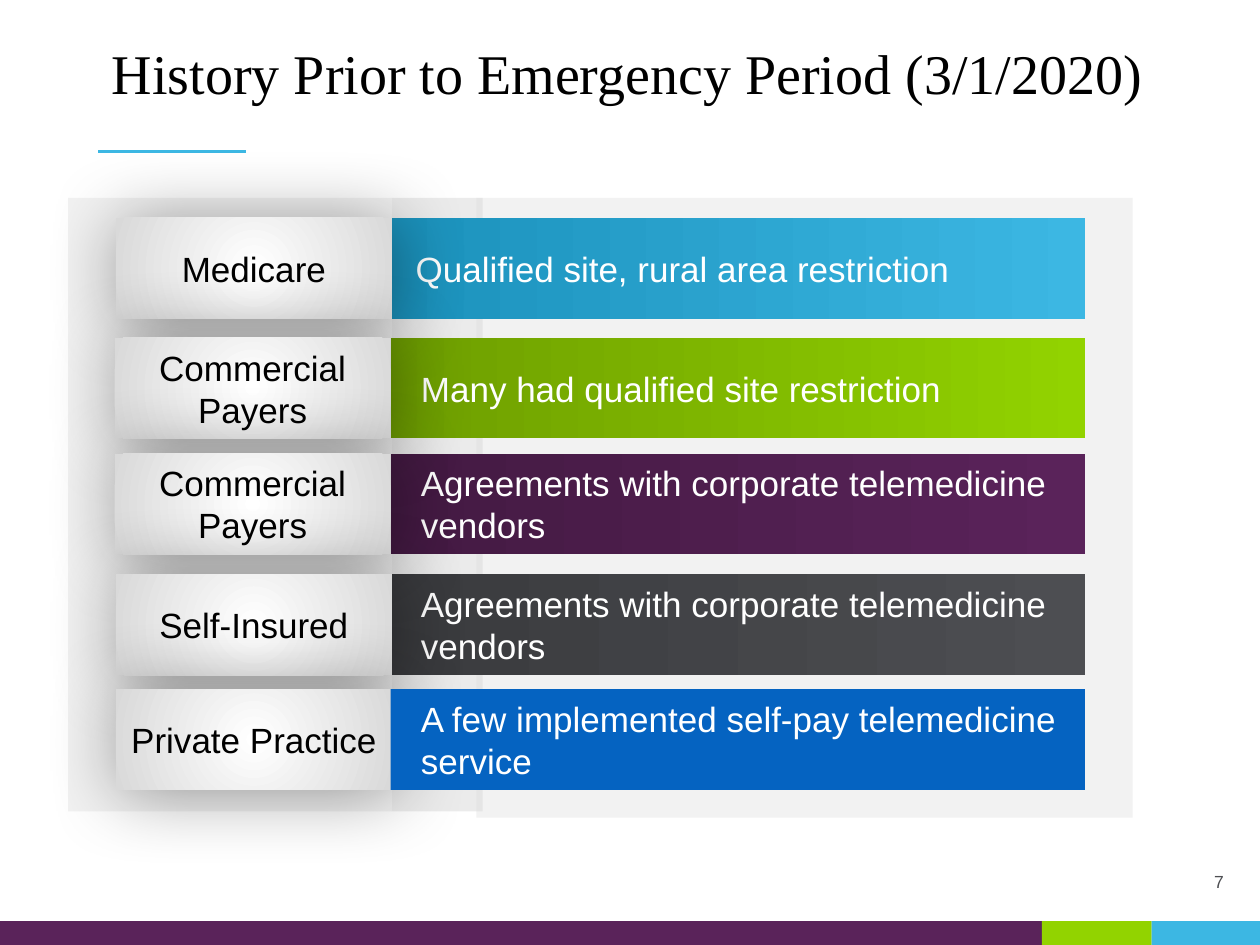
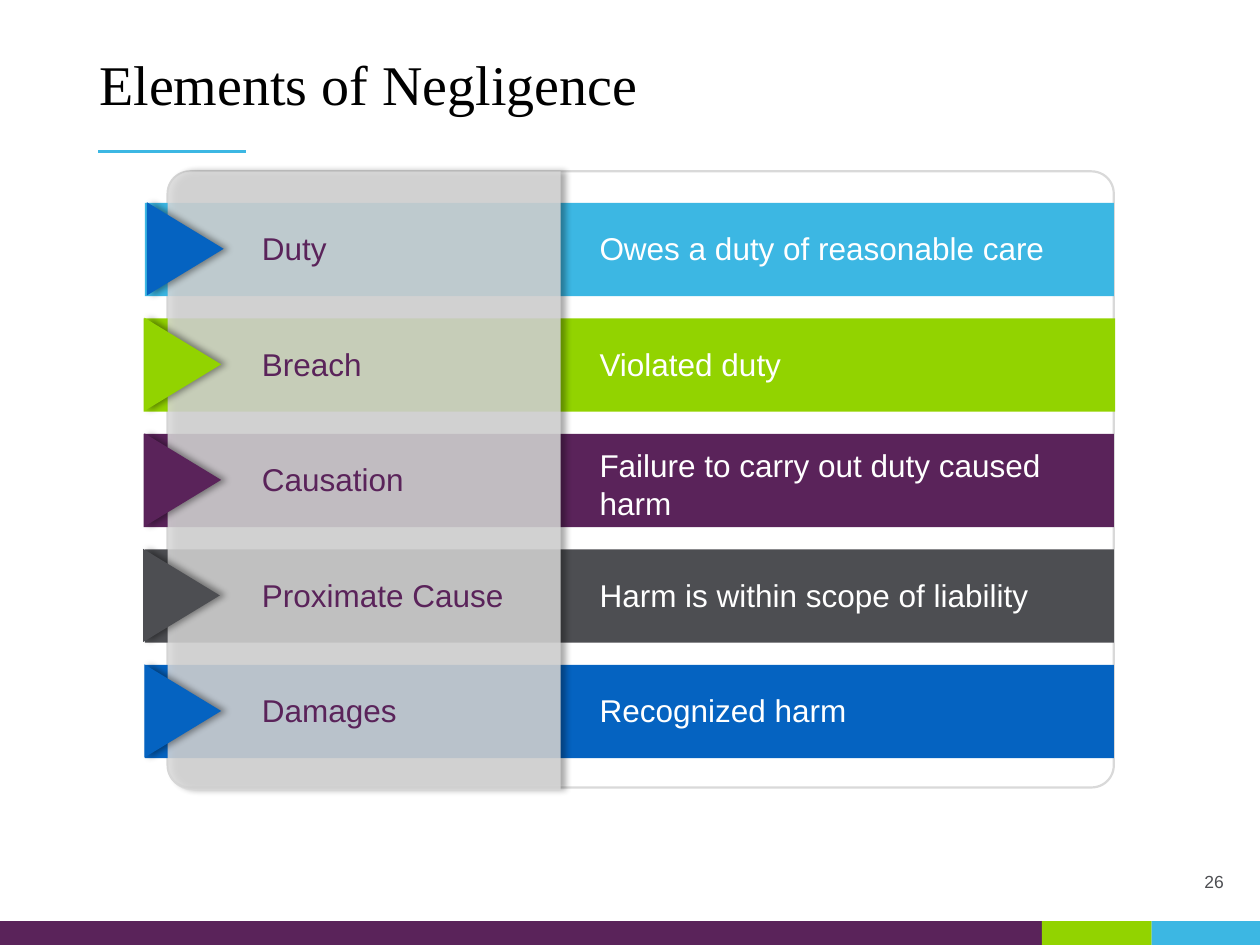
from dataclasses import dataclass
from math import cos, pi, sin

from lxml import etree
from pptx import Presentation
from pptx.dml.color import RGBColor
from pptx.enum.shapes import MSO_CONNECTOR, MSO_SHAPE
from pptx.enum.text import MSO_ANCHOR, PP_ALIGN
from pptx.oxml.ns import qn
from pptx.shapes.base import BaseShape
from pptx.slide import Slide
from pptx.util import Inches, Pt

RECTANGLE = MSO_SHAPE.RECTANGLE
ROUNDED = MSO_SHAPE.ROUNDED_RECTANGLE
TRIANGLE = MSO_SHAPE.ISOSCELES_TRIANGLE
STRAIGHT = MSO_CONNECTOR.STRAIGHT
TOP, MIDDLE, BOTTOM = MSO_ANCHOR.TOP, MSO_ANCHOR.MIDDLE, MSO_ANCHOR.BOTTOM
LEFT, CENTER, RIGHT = PP_ALIGN.LEFT, PP_ALIGN.CENTER, PP_ALIGN.RIGHT


@dataclass(frozen=True)
class Theme:
    sky: str = "3CB7E3"
    dark_sky: str = "1B92BC"
    green: str = "92D300"
    dark_green: str = "6E9E00"
    purple: str = "5A235A"
    dark_purple: str = "441A43"
    gray: str = "4D4E52"
    dark_gray: str = "3A3B3E"
    blue: str = "0563C1"
    silver: str = "D9D9D9"
    mist: str = "F2F2F2"
    white: str = "FFFFFF"
    black: str = "000000"
    title_font: str = "Times New Roman"
    body_font: str = "Arial"
    title_size: float = 32
    bar_size: float = 20
    element_size: float = 18
    number_size: float = 10


THEME = Theme()


@dataclass(frozen=True)
class Box:
    left: float
    top: float
    width: float
    height: float

    def lengths(self) -> list[int]:
        return [Inches(v) for v in (self.left, self.top, self.width, self.height)]


@dataclass(frozen=True)
class TextStyle:
    size: float
    color: str
    font: str = THEME.body_font
    align: PP_ALIGN = LEFT
    anchor: MSO_ANCHOR = TOP
    line_spacing: float = 1.0
    indent: float = 0
    side_inset: float = 0.1
    edge_inset: float = 0.05


@dataclass(frozen=True)
class PayerRow:
    top: float
    label_left: float
    label: tuple[str, ...]
    detail: str
    colors: tuple[str, ...]
    indent: float = 0.2
    side_inset: float = 0.04
    edge_inset: float = 0.02


@dataclass(frozen=True)
class ElementRow:
    name: str
    meaning: str
    color: str
    arrow_color: str
    arrow_left: float
    bar_left: float = 1.15
    bar_right: float = 8.84
    meaning_offset: float = 0.16
    meaning_height: float = 0.4


TITLE = TextStyle(THEME.title_size, THEME.black, THEME.title_font, line_spacing=0.9)
NUMBER = TextStyle(THEME.number_size, THEME.gray, align=RIGHT, anchor=BOTTOM,
                   line_spacing=0.9)
PAYER_LABEL = TextStyle(THEME.bar_size, THEME.black, align=CENTER, anchor=MIDDLE)
ELEMENT_NAME = TextStyle(THEME.element_size, THEME.purple)
ELEMENT_MEANING = TextStyle(THEME.element_size, THEME.white)

FOOTER_BANDS = ((0, 8.27, THEME.purple), (8.27, 0.87, THEME.green),
                (9.14, 0.86, THEME.sky))

PAYER_ROWS = (
    PayerRow(1.73, 0.92, ("Medicare",), "Qualified site, rural area restriction",
             (THEME.dark_sky, THEME.sky), 0.1, 0.1, 0.05),
    PayerRow(2.68, 0.91, ("Commercial", "Payers"),
             "Many had qualified site restriction", (THEME.dark_green, THEME.green)),
    PayerRow(3.6, 0.91, ("Commercial", "Payers"),
             "Agreements with corporate telemedicine vendors",
             (THEME.dark_purple, THEME.purple)),
    PayerRow(4.56, 0.92, ("Self-Insured",),
             "Agreements with corporate telemedicine vendors",
             (THEME.dark_gray, THEME.gray)),
    PayerRow(5.47, 0.92, ("Private Practice",),
             "A few implemented self-pay telemedicine service", (THEME.blue,)),
)

ELEMENT_ROWS = (
    ElementRow("Duty", "Owes a duty of reasonable care", THEME.sky, THEME.blue, 1.1),
    ElementRow("Breach", "Violated duty", THEME.green, THEME.green, 1.08,
               bar_left=1.14, bar_right=8.85),
    ElementRow("Causation", "Failure to carry out duty caused harm", THEME.purple,
               THEME.purple, 1.08, bar_left=1.14, meaning_offset=0.05,
               meaning_height=0.71),
    ElementRow("Proximate Cause", "Harm is within scope of liability", THEME.gray,
               THEME.gray, 1.07),
    ElementRow("Damages", "Recognized harm", THEME.blue, THEME.blue, 1.08),
)
ELEMENT_TOP = 1.61
ELEMENT_PITCH = 0.917


def rgb(color: str) -> RGBColor:
    return RGBColor.from_string(color)


def fill_solid(shape: BaseShape, color: str, opacity: int = 100) -> None:
    shape.fill.solid()
    shape.fill.fore_color.rgb = rgb(color)
    if opacity < 100:
        color_node = shape.element.spPr.find(qn("a:solidFill"))[0]
        etree.SubElement(color_node, qn("a:alpha"), val=str(opacity * 1000))


def fill_gradient(shape: BaseShape, colors: tuple[str, ...], radial: bool = False) -> None:
    shape.fill.gradient()
    shape.fill.gradient_angle = 0
    for stop, color in zip(shape.fill.gradient_stops, colors):
        stop.color.rgb = rgb(color)
    if radial:
        gradient = shape.element.spPr.find(qn("a:gradFill"))
        gradient.remove(gradient.find(qn("a:lin")))
        circle = etree.SubElement(gradient, qn("a:path"), path="circle")
        etree.SubElement(circle, qn("a:fillToRect"),
                         {side: "50000" for side in "ltrb"})


def add_shadow(shape: BaseShape, blur: float, angle: int) -> None:
    effects = shape.element.spPr.find(qn("a:effectLst"))
    shadow = etree.SubElement(
        effects, qn("a:outerShdw"), blurRad=str(Pt(blur)), dist=str(Pt(3)),
        dir=str(angle * 60000), algn="ctr", rotWithShape="0")
    color_node = etree.SubElement(shadow, qn("a:srgbClr"), val=THEME.black)
    etree.SubElement(color_node, qn("a:alpha"), val="40000")


def add_block(slide: Slide, box: Box, color: str, kind: MSO_SHAPE = RECTANGLE,
              opacity: int = 100) -> BaseShape:
    """Add a flat shape with no outline and no shadow."""
    shape = slide.shapes.add_shape(kind, *box.lengths())
    shape.shadow.inherit = False
    shape.line.fill.background()
    fill_solid(shape, color, opacity)
    return shape


def write_text(shape: BaseShape, lines: tuple[str, ...], style: TextStyle) -> None:
    frame = shape.text_frame
    frame.word_wrap = True
    frame.vertical_anchor = style.anchor
    frame.margin_left = frame.margin_right = Inches(style.side_inset)
    frame.margin_top = frame.margin_bottom = Inches(style.edge_inset)
    for index, line in enumerate(lines):
        paragraph = frame.add_paragraph() if index else frame.paragraphs[0]
        paragraph.alignment = style.align
        paragraph.line_spacing = style.line_spacing
        if style.indent:
            properties = paragraph._p.get_or_add_pPr()
            properties.set("marL", str(Inches(style.indent)))
            properties.set("indent", "0")
        run = paragraph.add_run()
        run.text = line
        run.font.name = style.font
        run.font.size = Pt(style.size)
        run.font.color.rgb = rgb(style.color)


def add_text(slide: Slide, box: Box, text: str, style: TextStyle) -> None:
    write_text(slide.shapes.add_textbox(*box.lengths()), (text,), style)


def add_base_slide(presentation: Presentation, number: int) -> Slide:
    """Add a blank slide with the accent rule, page number and footer bands."""
    slide = presentation.slides.add_slide(presentation.slide_layouts[6])
    rule = slide.shapes.add_connector(STRAIGHT, Inches(0.78), Inches(1.2),
                                      Inches(1.95), Inches(1.2))
    rule.line.color.rgb = rgb(THEME.sky)
    rule.line.width = Pt(1.5)
    etree.SubElement(rule.element.spPr, qn("a:effectLst"))
    add_text(slide, Box(1.19, 6.86, 8.62, 0.27), str(number), NUMBER)
    for left, width, color in FOOTER_BANDS:
        add_block(slide, Box(left, 7.31, width, 0.19), color)
    return slide


def add_payer_bar(slide: Slide, row: PayerRow) -> None:
    bar = add_block(slide, Box(3.1, row.top, 5.51, 0.8), row.colors[0])
    if len(row.colors) > 1:
        fill_gradient(bar, row.colors)
    write_text(bar, (row.detail,), TextStyle(
        THEME.bar_size, THEME.white, anchor=MIDDLE, indent=row.indent,
        side_inset=row.side_inset, edge_inset=row.edge_inset))


def add_payer_label(slide: Slide, row: PayerRow) -> None:
    label = add_block(slide, Box(row.label_left, row.top, 2.19, 0.8), THEME.white)
    fill_gradient(label, (THEME.white, THEME.silver), radial=True)
    add_shadow(label, 44, 45)
    write_text(label, row.label, PAYER_LABEL)


def build_history_slide(presentation: Presentation) -> None:
    slide = add_base_slide(presentation, 7)
    add_text(slide, Box(0.79, 0.32, 8.75, 1.25),
             "History Prior to Emergency Period (3/1/2020)", TITLE)
    add_block(slide, Box(3.78, 1.57, 5.21, 4.92), THEME.mist)
    add_block(slide, Box(3.11, 1.57, 0.72, 4.87), THEME.silver, opacity=50)
    add_block(slide, Box(0.54, 1.57, 2.57, 4.87), THEME.mist)
    *shaded_rows, last_row = PAYER_ROWS
    for row in shaded_rows:
        add_payer_bar(slide, row)
    for row in PAYER_ROWS:
        add_payer_label(slide, row)
    add_payer_bar(slide, last_row)


def add_name_panel(slide: Slide, box: Box, radius: float) -> None:
    """Add a translucent panel whose two left corners are rounded."""
    right, bottom = box.left + box.width, box.top + box.height
    center_x = box.left + radius
    points = [(right, box.top), (right, bottom)]
    for center_y, start in ((bottom - radius, pi / 2), (box.top + radius, pi)):
        for step in range(13):
            angle = start + step * pi / 24
            points.append((center_x + radius * cos(angle),
                           center_y + radius * sin(angle)))
    corners = [(Inches(x), Inches(y)) for x, y in points]
    builder = slide.shapes.build_freeform(*corners[0])
    builder.add_line_segments(corners[1:], close=True)
    panel = builder.convert_to_shape()
    panel.shadow.inherit = False
    panel.line.fill.background()
    fill_solid(panel, THEME.silver, 85)
    add_shadow(panel, 4, 0)


def build_negligence_slide(presentation: Presentation) -> None:
    slide = add_base_slide(presentation, 26)
    add_text(slide, Box(0.69, 0.4, 8.62, 0.62), "Elements of Negligence", TITLE)
    card = add_block(slide, Box(1.33, 1.36, 7.51, 4.89), THEME.white, ROUNDED)
    card.adjustments[0] = 0.036
    card.line.color.rgb = rgb(THEME.silver)
    card.line.width = Pt(1.25)
    placed_rows = [(ELEMENT_TOP + index * ELEMENT_PITCH, row)
                   for index, row in enumerate(ELEMENT_ROWS)]
    for top, row in placed_rows:
        add_block(slide, Box(row.bar_left, top, row.bar_right - row.bar_left, 0.74),
                  row.color)
    add_name_panel(slide, Box(1.33, 1.36, 3.12, 4.91), 0.19)
    for top, row in placed_rows:
        arrow = add_block(slide, Box(row.arrow_left, top + 0.06, 0.74, 0.61),
                          row.arrow_color, TRIANGLE)
        arrow.rotation = 90
        add_shadow(arrow, 4, 0)
        add_text(slide, Box(1.98, top + 0.16, 2.31, 0.4), row.name, ELEMENT_NAME)
        add_text(slide, Box(4.66, top + row.meaning_offset, 4.01, row.meaning_height),
                 row.meaning, ELEMENT_MEANING)


def main() -> None:
    presentation = Presentation()
    presentation.slide_width = Inches(10)
    presentation.slide_height = Inches(7.5)
    build_history_slide(presentation)
    build_negligence_slide(presentation)
    presentation.save("out.pptx")


if __name__ == "__main__":
    main()
